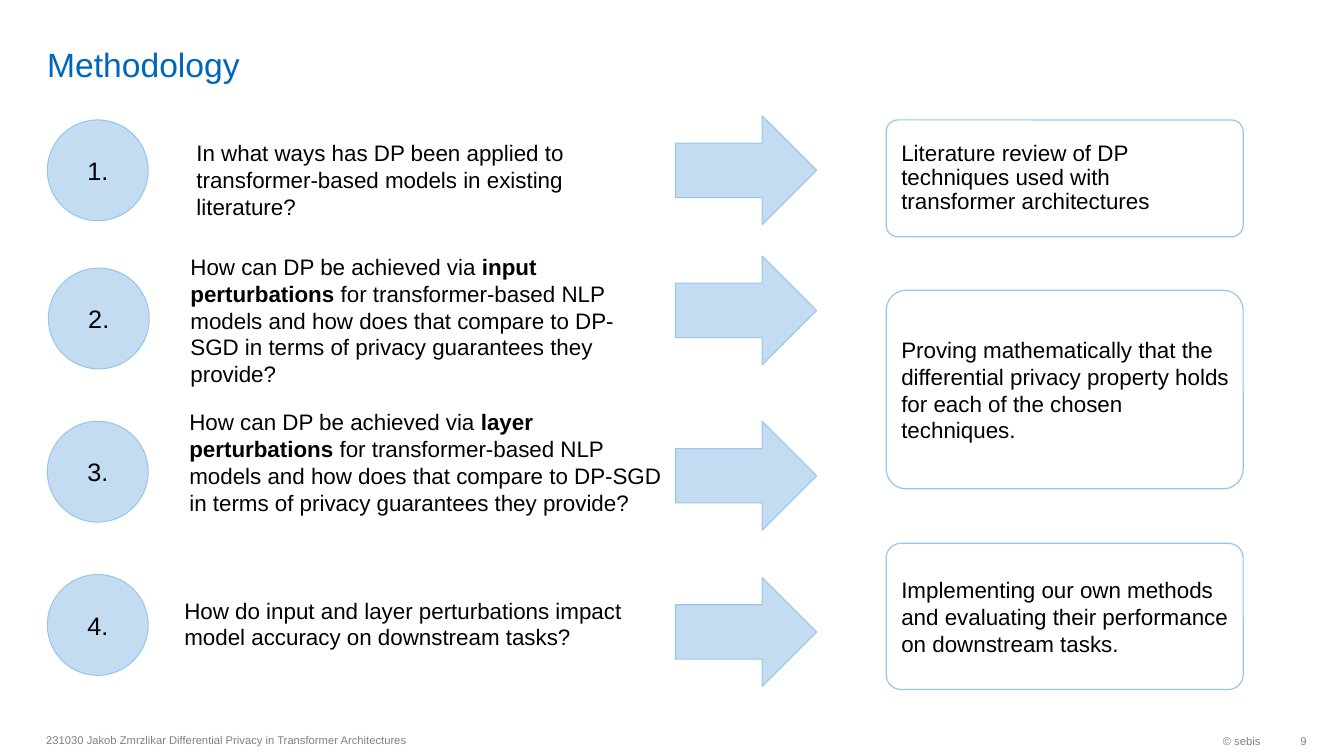
"""Build the Methodology slide: four research questions leading to three methods."""
from pptx import Presentation, util as u
from pptx.dml.color import RGBColor
from pptx.enum import shapes, text

PX = 9144
SLIDE = (1333, 750)
FONT = "Arial"
COLORS = {"title": "0065BD", "footer": "808080", "body": "000000",
          "fill": "C4DCF2", "line": "98C6EA", "panel": "FFFFFF"}

TITLE = ("Methodology", (37, 5, 1158, 79))
FOOTERS = [
    ("© sebis", (1026, 719, 234, 32), "RIGHT", 10),
    ("231030 Jakob Zmrzlikar Differential Privacy in Transformer Architectures",
     (36, 718, 630, 32), "LEFT", 10),
    ("9", (1260, 719, 36, 32), "RIGHT", 0),
]
COMPARISON = (" for transformer-based NLP models and how does that compare to DP-SGD"
              " in terms of privacy guarantees they provide?")
QUESTIONS = [
    {"circle": (47, 119), "arrow_top": 115, "box": (185, 133, 485, 94),
     "runs": ["In what ways has DP been applied to transformer-based models"
              " in existing literature?"]},
    {"circle": (48, 266), "arrow_top": 254, "box": (179, 246, 485, 141),
     "runs": ["How can DP be achieved via ", "input perturbations", COMPARISON]},
    {"circle": (47, 418), "arrow_top": 418, "box": (178, 400, 490, 145),
     "runs": ["How can DP be achieved via ", "layer perturbations", COMPARISON]},
    {"circle": (47, 570), "arrow_top": 573, "box": (173, 587, 499, 79),
     "runs": ["How do input and layer perturbations impact model accuracy"
              " on downstream tasks?"]},
]
METHODS = [
    ("Literature review of DP techniques used with transformer architectures",
     119, 116, 0.9),
    ("Proving mathematically that the differential privacy property holds for"
     " each of the chosen techniques.", 288, 197, 1.0),
    ("Implementing our own methods and evaluating their performance on"
     " downstream tasks.", 539, 145, 1.0),
]
CIRCLE = 100
ARROW_LEFT, ARROW_WIDTH, ARROW_HEIGHT = 670, 140, 108
PANEL_LEFT, PANEL_WIDTH = 879, 354
PANEL_INDENT, LABEL_WIDTH = 9, 337

deck = Presentation()
deck.slide_width, deck.slide_height = (side * PX for side in SLIDE)
slide = deck.slides.add_slide(deck.slide_layouts[6])


def color(name):
    return RGBColor.from_string(COLORS[name])


def emu(box):
    return [side * PX for side in box]


def add_outlined(preset, box, fill="fill", width=0.75):
    shape = slide.shapes.add_shape(preset, *emu(box))
    shape.shadow.inherit = False
    shape.fill.solid()
    shape.fill.fore_color.rgb = color(fill)
    shape.line.color.rgb = color("line")
    shape.line.width = u.Pt(width)
    return shape


def write(runs, box=None, holder=None, size=16, ink="body", align="LEFT",
          anchor="TOP", insets=(10, 5, 10, 5), spacing=None):
    """Write runs, every second one bold, into a holder or a new text box."""
    holder = holder or slide.shapes.add_textbox(*emu(box))
    frame = holder.text_frame
    frame.word_wrap = True
    frame.vertical_anchor = text.MSO_ANCHOR[anchor]
    (frame.margin_left, frame.margin_top,
     frame.margin_right, frame.margin_bottom) = emu(insets)
    paragraph = frame.paragraphs[0]
    paragraph.alignment = text.PP_ALIGN[align]
    if spacing:
        paragraph.line_spacing = spacing
    for index, words in enumerate(runs):
        run = paragraph.add_run()
        run.text = words
        run.font.name = FONT
        run.font.size = u.Pt(size)
        run.font.bold = index % 2 == 1
        run.font.color.rgb = color(ink)


heading, heading_box = TITLE
write([heading], heading_box, size=24, ink="title", anchor="BOTTOM",
      insets=(10, 0, 10, 0))

for words, box, align, right_inset in FOOTERS:
    write([words], box, size=8, ink="footer", align=align, anchor="MIDDLE",
          insets=(10, 5, right_inset, 5))

for number, question in enumerate(QUESTIONS, 1):
    circle = add_outlined(shapes.MSO_SHAPE.OVAL,
                          (*question["circle"], CIRCLE, CIRCLE))
    write([f"{number}."], holder=circle, size=18, align="CENTER", anchor="MIDDLE")
    write(question["runs"], question["box"])
    add_outlined(shapes.MSO_SHAPE.RIGHT_ARROW,
                 (ARROW_LEFT, question["arrow_top"], ARROW_WIDTH, ARROW_HEIGHT))

for words, top, height, spacing in METHODS:
    panel = add_outlined(shapes.MSO_SHAPE.ROUNDED_RECTANGLE,
                         (PANEL_LEFT, top, PANEL_WIDTH, height), "panel", 0.85)
    panel.adjustments[0] = 0.1
    write([words], (PANEL_LEFT + PANEL_INDENT, top + 4, LABEL_WIDTH, height - 8),
          anchor="MIDDLE", insets=(6, 6, 6, 6), spacing=spacing)

deck.save("out.pptx")
